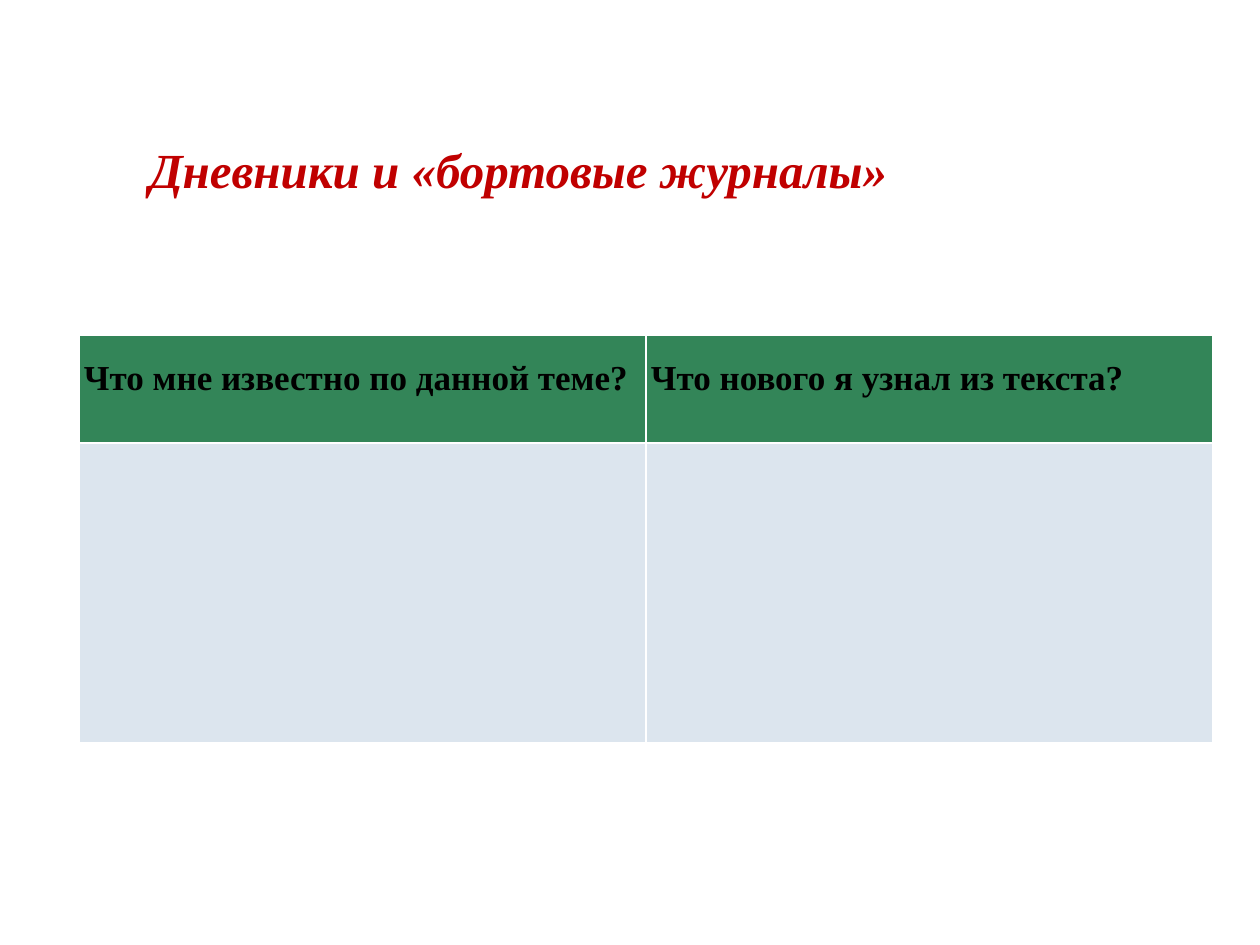
from pptx import Presentation
from pptx.dml.color import RGBColor
from pptx.enum.text import MSO_ANCHOR
from pptx.util import Pt

TITLE = "Дневники и «бортовые журналы»"
TABLE_ROWS = [
    ("Что мне известно по данной теме?", "Что нового я узнал из текста?"),
    ("", ""),
]
ROW_HEIGHTS = [108, 300]
ROW_FILLS = ["header", "body"]
COLUMN_WIDTH = 567
CELL_MARGIN = 5
FONT = "Times New Roman"
COLORS = {"title": "C00000", "text": "000000", "header": "338558", "body": "DCE5EE"}
SCALE = 914400 // 126


def px(length):
    return length * SCALE


def add_run(paragraph, text, size, color, italic=False):
    run = paragraph.add_run()
    run.text = text
    run.font.name = FONT
    run.font.size = Pt(size)
    run.font.bold = True
    run.font.italic = italic
    run.font.color.rgb = RGBColor.from_string(COLORS[color])


def add_title(slide):
    shape = slide.shapes.add_textbox(px(137), px(39), px(1074), px(202))
    frame = shape.text_frame
    frame.word_wrap = True
    frame.vertical_anchor = MSO_ANCHOR.MIDDLE
    frame.margin_top = px(66)
    frame.margin_bottom = 0
    paragraph = frame.paragraphs[0]
    paragraph.line_spacing = 0.9
    add_run(paragraph, TITLE, 28, "title", italic=True)


def add_journal_table(slide):
    column_count = len(TABLE_ROWS[0])
    table = slide.shapes.add_table(
        len(TABLE_ROWS), column_count, px(79), px(335),
        px(COLUMN_WIDTH * column_count), px(sum(ROW_HEIGHTS)),
    ).table
    for column in table.columns:
        column.width = px(COLUMN_WIDTH)
    for row, height, fill, texts in zip(table.rows, ROW_HEIGHTS, ROW_FILLS, TABLE_ROWS):
        row.height = px(height)
        for cell, text in zip(row.cells, texts):
            cell.fill.solid()
            cell.fill.fore_color.rgb = RGBColor.from_string(COLORS[fill])
            cell.margin_left = cell.margin_right = px(CELL_MARGIN)
            cell.margin_top = cell.margin_bottom = px(CELL_MARGIN)
            if text:
                paragraph = cell.text_frame.paragraphs[0]
                paragraph.line_spacing = 1.5
                add_run(paragraph, text, 20, "text")


def main():
    presentation = Presentation()
    presentation.slide_width = px(1260)
    presentation.slide_height = px(945)
    slide = presentation.slides.add_slide(presentation.slide_layouts[6])
    add_title(slide)
    add_journal_table(slide)
    presentation.save("out.pptx")


if __name__ == "__main__":
    main()
